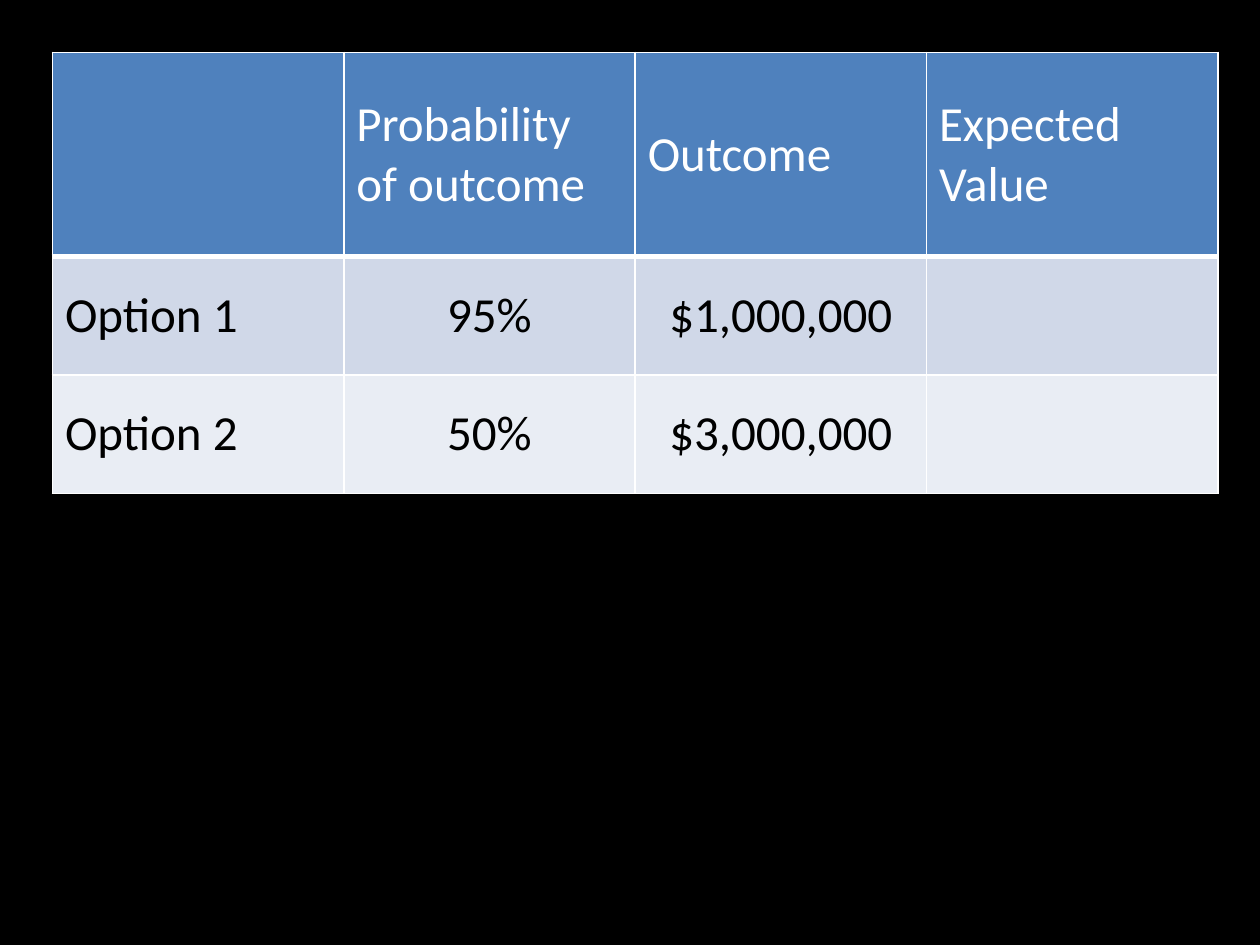
from lxml.etree import SubElement
from pptx import Presentation
from pptx.dml.color import RGBColor
from pptx.enum.text import MSO_ANCHOR, PP_ALIGN
from pptx.oxml.ns import qn
from pptx.util import Pt

ROWS = [
    ("", "Probability of outcome", "Outcome", "Expected Value"),
    ("Option 1", "95%", "$1,000,000", ""),
    ("Option 2", "50%", "$3,000,000", ""),
]
COLORS = {"background": "000000", "header": "4F81BD", "odd": "D0D8E8",
          "even": "E9EDF4", "light": "FFFFFF", "dark": "000000"}
ROW_STYLES = [("header", "light", 3), ("odd", "dark", 1), ("even", "dark", 1)]
ROW_HEIGHTS = [116.64, 67.68, 67.68]
COL_WIDTH = 166.5
LEFT = TOP = 30
FONT = {"name": "Calibri", "size": Pt(28), "bold": False}


def rgb(name):
    """Return the named colour."""
    return RGBColor.from_string(COLORS[name])


def add_borders(cell, bottom):
    """Draw the cell's four edges in the light colour."""
    tcPr = cell._tc.get_or_add_tcPr()
    widths = {"a:lnL": 1, "a:lnR": 1, "a:lnT": 1, "a:lnB": bottom}
    for i, (tag, width) in enumerate(widths.items()):
        ln = SubElement(tcPr, qn(tag), w=str(Pt(width)))
        fill = SubElement(ln, qn("a:solidFill"))
        SubElement(fill, qn("a:srgbClr"), val=COLORS["light"])
        tcPr.insert(i, ln)


def format_cell(cell, text, style, centered):
    """Fill one cell and set its text."""
    fill, color, bottom = style
    cell.fill.solid()
    cell.fill.fore_color.rgb = rgb(fill)
    cell.vertical_anchor = MSO_ANCHOR.MIDDLE
    add_borders(cell, bottom)
    p = cell.text_frame.paragraphs[0]
    p.alignment = PP_ALIGN.CENTER if centered else PP_ALIGN.LEFT
    if text:
        r = p.add_run()
        r.text = text
        for key, value in FONT.items():
            setattr(r.font, key, value)
        r.font.color.rgb = rgb(color)


def main():
    """Build the slide with the expected value table."""
    prs = Presentation()
    prs.slide_width, prs.slide_height = Pt(720), Pt(540)
    s = prs.slides.add_slide(prs.slide_layouts[6])
    s.background.fill.solid()
    s.background.fill.fore_color.rgb = rgb("background")

    cols = len(ROWS[0])
    table = s.shapes.add_table(len(ROWS), cols, Pt(LEFT), Pt(TOP),
                               Pt(COL_WIDTH * cols), Pt(sum(ROW_HEIGHTS))).table
    for col in table.columns:
        col.width = Pt(COL_WIDTH)
    for i, (row, style) in enumerate(zip(ROWS, ROW_STYLES)):
        table.rows[i].height = Pt(ROW_HEIGHTS[i])
        for j, text in enumerate(row):
            format_cell(table.cell(i, j), text, style, i > 0 and j > 0)

    prs.save("out.pptx")


if __name__ == "__main__":
    main()
